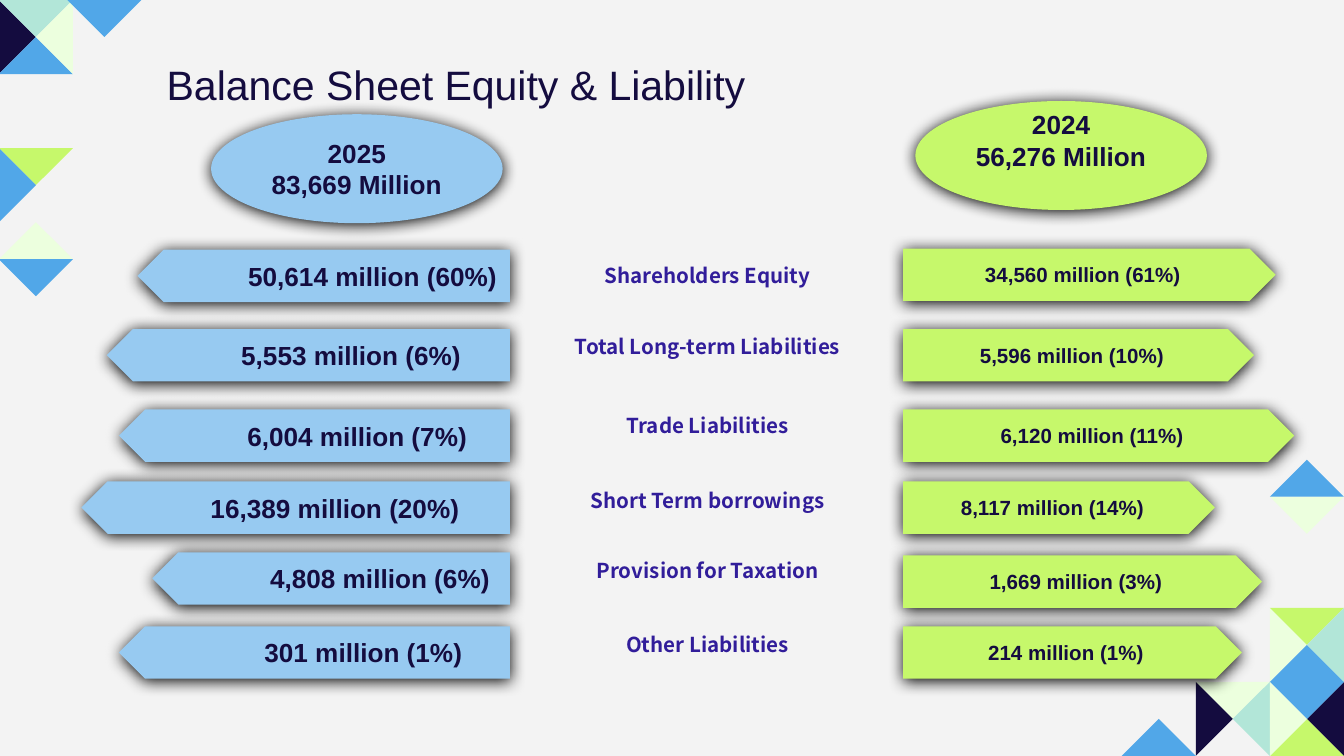
from typing import NamedTuple

from pptx import Presentation
from pptx.dml import color
from pptx.enum import shapes, text
from pptx.oxml import ns
from pptx.oxml import parse_xml
from pptx.util import Cm, Pt

NAVY, BLUE, SKY = "140C3F", "51A7E8", "97CAF1"
LIME, MINT, PALE = "C6F86B", "B2E6D8", "ECFFDE"
VIOLET, PAPER = "311D9A", "F3F3F3"
WIDTH, HEIGHT = 25.4, 14.29
UNIT = 0.7
BAR_HEIGHT = 0.99
LEFT_BARS_END, RIGHT_BARS_START = 9.64, 17.07
LABEL_LEFT, LABEL_WIDTH, LABEL_HEIGHT = 10.06, 6.63, 0.66
BASES = {"left": (-1, 0), "right": (1, 0), "up": (0, -1), "down": (0, 1)}


class Triangle(NamedTuple):
    column: float
    row: float
    base: str
    fill: str


class Bar(NamedTuple):
    caption: str
    top: float
    width: float
    indent: float = 0


class Row(NamedTuple):
    label: str
    label_top: float
    current: Bar
    previous: Bar


class Total(NamedTuple):
    lines: tuple
    left: float
    top: float
    fill: str
    insets: tuple


TOP_LEFT = [
    Triangle(1, 1, "left", NAVY), Triangle(1, 1, "up", MINT),
    Triangle(1, 1, "down", BLUE), Triangle(1, 1, "right", PALE),
    Triangle(2.85, 1, "up", BLUE),
    Triangle(1, 5, "up", LIME), Triangle(1, 5, "left", BLUE),
    Triangle(1, 6, "down", PALE), Triangle(1, 8, "up", BLUE),
]
BOTTOM_RIGHT = [
    Triangle(-3, -1, "up", PALE), Triangle(-3, -1, "right", MINT),
    Triangle(-3, -1, "left", NAVY), Triangle(-5, -1, "down", BLUE),
    Triangle(-1, -3, "left", PALE), Triangle(-1, -3, "up", LIME),
    Triangle(-1, -3, "down", BLUE), Triangle(-1, -3, "right", MINT),
    Triangle(-1, -1, "right", NAVY), Triangle(-1, -1, "down", LIME),
    Triangle(-1, -1, "up", BLUE), Triangle(-1, -1, "left", PALE),
    Triangle(-1, -6, "up", PALE), Triangle(-1, -8, "down", BLUE),
]
ROWS = [
    Row("Shareholders Equity", 4.88,
        Bar("50,614 million (60%)", 4.72, 7.04, 1.6),
        Bar("34,560 million (61%)", 4.7, 7.04)),
    Row("Total Long-term Liabilities", 6.22,
        Bar("5,553 million (6%)", 6.22, 7.62, 1.37),
        Bar("5,596 million (10%)", 6.22, 6.63)),
    Row("Trade Liabilities", 7.7,
        Bar("6,004 million (7%)", 7.74, 7.39, 1.37),
        Bar("6,120 million (11%)", 7.74, 7.39)),
    Row("Short Term borrowings", 9.12,
        Bar("16,389 million (20%)", 9.1, 8.1, 1.24),
        Bar("8,117 million (14%)", 9.1, 5.89)),
    Row("Provision for Taxation", 10.44,
        Bar("4,808 million (6%)", 10.44, 6.76, 1.6),
        Bar("1,669 million (3%)", 10.5, 6.78)),
    Row("Other Liabilities", 11.84,
        Bar("301 million (1%)", 11.84, 7.39, 1.6),
        Bar("214 million (1%)", 11.84, 6.4)),
]
TOTALS = [
    Total(("2025", "83,669 Million"), 3.99, 2.16, SKY, (0.13, 0.13)),
    Total(("2024", "56,276 Million"), 17.3, 1.91, LIME, (0, 0.59)),
]


def paint(fill, value: str) -> None:
    fill.solid()
    fill.fore_color.rgb = color.RGBColor.from_string(value)


def write(box, *lines: str, size: float, font: str = "Arial", ink: str = NAVY,
          bold: bool = True, align=text.PP_ALIGN.CENTER, indent: float = 0,
          anchor=text.MSO_ANCHOR.MIDDLE, wrap: bool = True,
          sides: float = 0.18, top: float = 0.1, bottom: float = 0.1) -> None:
    frame = box.text_frame
    frame.word_wrap = wrap
    frame.vertical_anchor = anchor
    frame.margin_left = frame.margin_right = Cm(sides)
    frame.margin_top, frame.margin_bottom = Cm(top), Cm(bottom)
    for number, line in enumerate(lines):
        para = frame.add_paragraph() if number else frame.paragraphs[0]
        para.alignment = align
        if indent:
            para._p.get_or_add_pPr().set("marL", str(Cm(indent)))
        span = para.add_run()
        span.text = line
        span.font.name, span.font.size, span.font.bold = font, Pt(size), bold
        paint(span.font.fill, ink)


def add_shadow(shape) -> None:
    effects = shape.element.spPr.find(ns.qn("a:effectLst"))
    effects.append(parse_xml(
        f'<a:outerShdw {ns.nsdecls("a")} blurRad="{Pt(8.5)}" dist="{Pt(1)}" '
        'dir="5400000" algn="ctr" rotWithShape="0">'
        '<a:srgbClr val="000000"/></a:outerShdw>'))


def add_block(page, kind, left: float, top: float, width: float,
              height: float, fill: str):
    shape = page.shapes.add_shape(kind, Cm(left), Cm(top), Cm(width), Cm(height))
    paint(shape.fill, fill)
    shape.line.fill.background()
    shape.shadow.inherit = False
    add_shadow(shape)
    return shape


def draw_triangle(page, item: Triangle, origin_x: float, origin_y: float) -> None:
    x, y = origin_x + item.column * UNIT, origin_y + item.row * UNIT
    dx, dy = (UNIT * step for step in BASES[item.base])
    corners = [(x + dx - dy, y + dy + dx), (x + dx + dy, y + dy - dx)]
    builder = page.shapes.build_freeform(Cm(x), Cm(y))
    builder.add_line_segments([(Cm(a), Cm(b)) for a, b in corners], close=True)
    shape = builder.convert_to_shape()
    paint(shape.fill, item.fill)
    shape.line.fill.background()
    shape.shadow.inherit = False


def draw_bar(page, bar: Bar, left: float, fill: str, size: float,
             flipped: bool = False) -> None:
    shape = add_block(page, shapes.MSO_SHAPE.PENTAGON, left, bar.top,
                      bar.width, BAR_HEIGHT, fill)
    if flipped:
        shape.element.spPr.find(ns.qn("a:xfrm")).set("flipH", "1")
    write(shape, bar.caption, size=size, indent=bar.indent)


def draw_row(page, row: Row) -> None:
    draw_bar(page, row.current, LEFT_BARS_END - row.current.width, SKY, 14,
             flipped=True)
    draw_bar(page, row.previous, RIGHT_BARS_START, LIME, 11)
    box = page.shapes.add_textbox(Cm(LABEL_LEFT), Cm(row.label_top),
                                  Cm(LABEL_WIDTH), Cm(LABEL_HEIGHT))
    write(box, row.label, size=11, font="Noto Sans CJK SC", ink=VIOLET,
          anchor=text.MSO_ANCHOR.TOP)


def draw_total(page, total: Total) -> None:
    shape = add_block(page, shapes.MSO_SHAPE.OVAL, total.left, total.top,
                      5.51, 2.06, total.fill)
    top, bottom = total.insets
    write(shape, *total.lines, size=14, sides=0.25, top=top, bottom=bottom)


def main() -> None:
    deck = Presentation()
    deck.slide_width, deck.slide_height = Cm(WIDTH), Cm(HEIGHT)
    page = deck.slides.add_slide(deck.slide_layouts[5])
    paint(page.background.fill, PAPER)
    title = page.shapes.title
    title.left, title.top = Cm(2.9), Cm(0.99)
    title.width, title.height = Cm(11.58), Cm(1.19)
    write(title, "Balance Sheet Equity & Liability", size=22, bold=False,
          align=text.PP_ALIGN.LEFT, anchor=text.MSO_ANCHOR.TOP, wrap=False,
          sides=0.25, top=0.13, bottom=0.13)
    for item in BOTTOM_RIGHT:
        draw_triangle(page, item, WIDTH, HEIGHT)
    for item in TOP_LEFT:
        draw_triangle(page, item, -0.02, 0)
    for row in ROWS:
        draw_row(page, row)
    for total in TOTALS:
        draw_total(page, total)
    deck.save("out.pptx")


if __name__ == "__main__":
    main()
